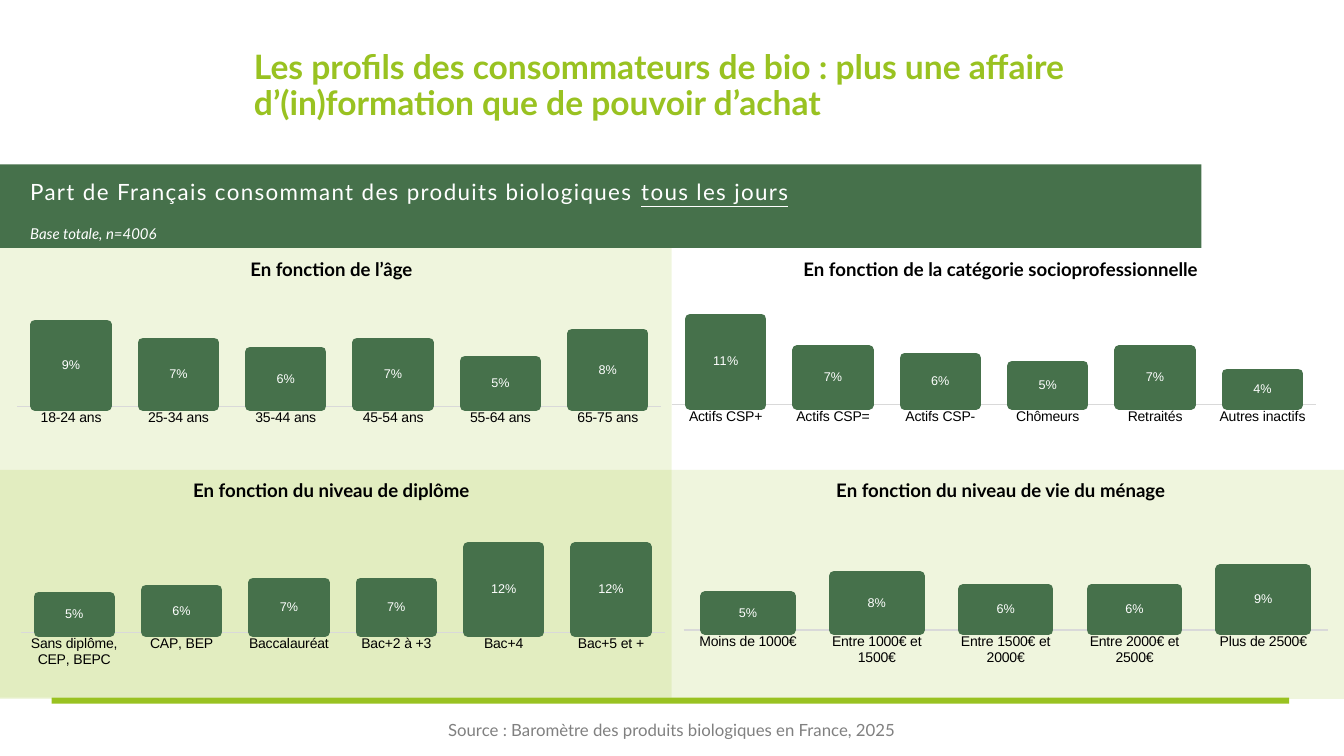
from dataclasses import dataclass

from lxml import etree
from pptx import Presentation
from pptx import util as u
from pptx.chart import data
from pptx.dml.color import RGBColor
from pptx.enum import chart as ch, shapes, text
from pptx.oxml.ns import qn


@dataclass(frozen=True)
class Theme:
    lime: RGBColor = RGBColor(0x99, 0xC2, 0x21)
    green: RGBColor = RGBColor(0x46, 0x71, 0x4B)
    white: RGBColor = RGBColor(0xFF, 0xFF, 0xFF)
    black: RGBColor = RGBColor(0, 0, 0)
    gray: RGBColor = RGBColor(0x80, 0x80, 0x80)
    rule: RGBColor = RGBColor(0xD9, 0xD9, 0xD9)
    face: str = "Lato"
    plain: str = "Arial"
    title: float = 24
    lead: float = 16
    head: float = 13.3
    foot: float = 12
    base: float = 10.7
    axis: float = 10
    label: float = 9


T = Theme()


def style(font, size, color, face=T.face, bold=False):
    font.size, font.name, font.bold = u.Pt(size), face, bold
    font.color.rgb = color


def fit(box, place, inset=(0, 0), anchor=text.MSO_ANCHOR.MIDDLE):
    """Place a text shape and set up its frame."""
    box.left, box.top, box.width, box.height = map(u.Cm, place)
    frame = box.text_frame
    frame.word_wrap = True
    frame.auto_size = text.MSO_AUTO_SIZE.NONE
    frame.vertical_anchor = anchor
    frame.margin_left = frame.margin_right = u.Cm(inset[0])
    frame.margin_top = frame.margin_bottom = u.Cm(inset[1])
    return frame


prs = Presentation()
prs.slide_width, prs.slide_height = u.Cm(33.87), u.Cm(19.05)
slide = prs.slides.add_slide(prs.slide_layouts[3])
title, lead, base = slide.placeholders

# Background bands: place, colour, opacity in percent
bands = [
    ((0, 5.97, 16.93, 11.61), T.lime, 15),
    ((0, 4.14, 30.28, 2.11), T.green, 100),
    ((1.3, 17.58, 31.19, 0.15), T.lime, 100),
    ((0, 11.84, 33.87, 5.77), T.lime, 15),
]
for place, color, alpha in bands:
    band = slide.shapes.add_shape(shapes.MSO_SHAPE.RECTANGLE, *map(u.Cm, place))
    band.shadow.inherit = False
    band.line.fill.background()
    band.fill.solid()
    band.fill.fore_color.rgb = color
    if alpha < 100:
        tint = band.element.spPr.find(".//" + qn("a:srgbClr"))
        etree.SubElement(tint, qn("a:alpha"), val=str(alpha * 1000))

# Placeholders, brought in front of the bands
for box in (title, lead, base):
    box.element.getparent().append(box.element)

frame = fit(title, (6.4, 0.97, 25.98, 2.41))
frame.text = "Les profils des consommateurs de bio : plus une affaire d’(in)formation que de pouvoir d’achat"
para = frame.paragraphs[0]
para.alignment = text.PP_ALIGN.LEFT
para.line_spacing = 0.9
style(para.runs[0].font, T.title, T.lime, bold=True)

lines = [
    (lead, (0.76, 4.14, 29.51, 1.47), T.lead, "Part de Français consommant des produits biologiques "),
    (base, (0.76, 5.66, 29.51, 0.51), T.base, "Base totale, n=4006"),
]
for box, place, size, words in lines:
    para = fit(box, place).paragraphs[0]
    para.text = words
    props = para._p.get_or_add_pPr()
    props.set("marL", "0")
    props.set("indent", "0")
    etree.SubElement(props, qn("a:buNone"))
    para.line_spacing = 0.9
    para.space_before = u.Pt(0)
    style(para.runs[0].font, size, T.white)
base.text_frame.paragraphs[0].runs[0].font.italic = True
para = lead.text_frame.paragraphs[0]
daily = para.add_run()
daily.text = "tous les jours"
style(daily.font, T.lead, T.white)
daily.font.underline = True
for run in para.runs:
    run.font._element.set("spc", "100")

# Panels: heading, heading corner, chart place, plot area, categories, percentages
panels = [
    ("En fonction de l’âge", (0.53, 6.38),
     (-0.08, 5.66, 17.27, 5.26), (0.03, 0, 0.94, 0.87),
     ["18-24 ans", "25-34 ans", "35-44 ans", "45-54 ans", "55-64 ans", "65-75 ans"],
     [9, 7, 6, 7, 5, 8]),
    ("En fonction de la catégorie socioprofessionnelle", (17.4, 6.38),
     (16.59, 5.89, 17.27, 5.26), (0.02, 0.07, 0.94, 0.75),
     ["Actifs CSP+", "Actifs CSP=", "Actifs CSP-", "Chômeurs", "Retraités", "Autres inactifs"],
     [11, 7, 6, 5, 7, 4]),
    ("En fonction du niveau de diplôme", (0.53, 11.94),
     (0, 12.04, 17.27, 5.26), (0.03, 0.06, 0.94, 0.68),
     ["Sans diplôme, CEP, BEPC", "CAP, BEP", "Baccalauréat", "Bac+2 à +3", "Bac+4", "Bac+5 et +"],
     [5, 6, 7, 7, 12, 12]),
    ("En fonction du niveau de vie du ménage", (17.4, 11.94),
     (16.71, 11.58, 17.27, 5.51), (0.03, 0.16, 0.94, 0.62),
     ["Moins de 1000€", "Entre 1000€ et 1500€", "Entre 1500€ et 2000€",
      "Entre 2000€ et 2500€", "Plus de 2500€"],
     [5, 8, 6, 6, 9]),
]
for head, spot, place, plot, cats, rates in panels:
    box = slide.shapes.add_textbox(0, 0, 0, 0)
    frame = fit(box, (*spot, 15.65, 0.84), (0.25, 0.13), text.MSO_ANCHOR.TOP)
    frame.text = head
    frame.paragraphs[0].alignment = text.PP_ALIGN.CENTER
    style(frame.paragraphs[0].runs[0].font, T.head, T.black, bold=True)

    table = data.CategoryChartData(number_format="###0%")
    table.categories = cats
    table.add_series("Series 1", [rate / 100 for rate in rates])
    chart = slide.shapes.add_chart(
        ch.XL_CHART_TYPE.COLUMN_STACKED, *map(u.Cm, place), table).chart
    chart.has_legend = chart.has_title = False
    style(chart.font, T.axis, T.black, T.plain)

    xaxis, yaxis = chart.category_axis, chart.value_axis
    xaxis.major_tick_mark = xaxis.minor_tick_mark = ch.XL_TICK_MARK.NONE
    xaxis.format.line.color.rgb = T.rule
    xaxis.format.line.width = u.Pt(0.75)
    yaxis.minimum_scale, yaxis.maximum_scale = 0, 0.2
    yaxis.has_major_gridlines = False
    yaxis.visible = False

    bars = chart.plots[0]
    bars.gap_width, bars.overlap = 50, 100
    bars.vary_by_categories = False
    look = bars.series[0].format
    look.fill.solid()
    look.fill.fore_color.rgb = look.line.color.rgb = T.green
    look.line.width = u.Pt(7)
    etree.SubElement(bars.series[0]._element.spPr.find(qn("a:ln")), qn("a:round"))
    labels = bars.series[0].data_labels
    labels.show_value = True
    labels.number_format, labels.number_format_is_linked = "###0%", False
    style(labels.font, T.label, T.white, T.plain)

    area = chart.element.find(".//" + qn("c:plotArea"))
    for old in area.findall(qn("c:layout")):
        area.remove(old)
    layout = etree.Element(qn("c:layout"))
    area.insert(0, layout)
    manual = etree.SubElement(layout, qn("c:manualLayout"))
    marks = [("layoutTarget", "inner"), ("xMode", "edge"), ("yMode", "edge")]
    for tag, val in marks + list(zip("xywh", plot)):
        etree.SubElement(manual, qn("c:" + tag), val=str(val))

frame = fit(slide.shapes.add_textbox(0, 0, 0, 0), (9.78, 17.7, 14.3, 1.37), (0.33, 0.18))
frame.text = "Source : Baromètre des produits biologiques en France, 2025"
frame.paragraphs[0].alignment = text.PP_ALIGN.CENTER
style(frame.paragraphs[0].runs[0].font, T.foot, T.gray)

prs.save("out.pptx")
